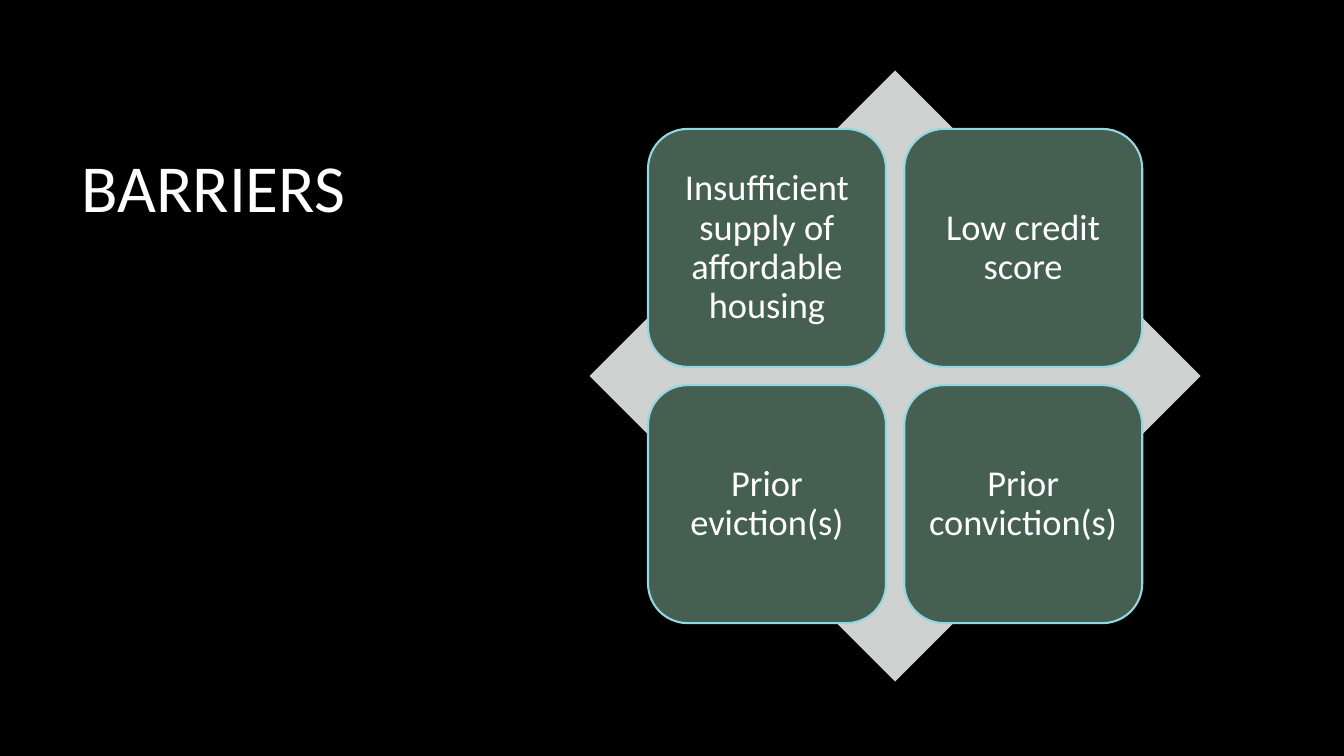
from pptx import Presentation
from pptx.dml.color import RGBColor
from pptx.enum.shapes import MSO_SHAPE as Preset
from pptx.enum.text import MSO_ANCHOR as Anchor, PP_ALIGN as Align
from pptx.util import Pt

COLORS = {
    "background": "000000",
    "text": "FFFFFF",
    "diamond": "CFD2D0",
    "tile": "455F51",
    "outline": "94D7E4",
}
FONT = "Calibri"
BARRIERS = [
    "Insufficient supply of affordable housing",
    "Low credit score",
    "Prior eviction(s)",
    "Prior conviction(s)",
]
CENTER_X, CENTER_Y = 639.4, 268.6
DIAMOND_SIZE = 436.3
TILE_SIZE = 170
TILE_GAP = 13


def color(name):
    return RGBColor.from_string(COLORS[name])


def write_text(text_frame, text, size, align):
    paragraph = text_frame.paragraphs[0]
    paragraph.alignment = align
    paragraph.line_spacing = 0.9
    run = paragraph.add_run()
    run.text = text
    run.font.name = FONT
    run.font.size = Pt(size)
    run.font.color.rgb = color("text")


def add_title(slide, text):
    title = slide.shapes.title
    title.left, title.top, title.width, title.height = Pt(51), Pt(106.5), Pt(231), Pt(350.5)
    title.text_frame.word_wrap = True
    title.text_frame.vertical_anchor = Anchor.TOP
    write_text(title.text_frame, text, 48, Align.LEFT)


def add_square_shape(slide, preset, left, top, size, fill):
    """Add a filled preset shape of equal width and height, with no outline."""
    shape = slide.shapes.add_shape(preset, Pt(left), Pt(top), Pt(size), Pt(size))
    shape.shadow.inherit = False
    shape.fill.solid()
    shape.fill.fore_color.rgb = color(fill)
    shape.line.fill.background()
    return shape


def add_tile(slide, left, top, text):
    tile = add_square_shape(slide, Preset.ROUNDED_RECTANGLE, left, top, TILE_SIZE, "tile")
    tile.line.color.rgb = color("outline")
    tile.line.width = Pt(1.5)
    frame = tile.text_frame
    frame.word_wrap = True
    frame.vertical_anchor = Anchor.MIDDLE
    frame.margin_left = frame.margin_right = frame.margin_top = frame.margin_bottom = Pt(7.8)
    write_text(frame, text, 26, Align.CENTER)


def add_matrix(slide, texts):
    """Add the diamond and a two-by-two grid of tiles around its centre."""
    half = DIAMOND_SIZE / 2
    add_square_shape(slide, Preset.DIAMOND, CENTER_X - half, CENTER_Y - half, DIAMOND_SIZE, "diamond")
    pitch = TILE_SIZE + TILE_GAP
    reach = TILE_SIZE + TILE_GAP / 2
    for index, text in enumerate(texts):
        row, column = divmod(index, 2)
        add_tile(slide, CENTER_X - reach + column * pitch, CENTER_Y - reach + row * pitch, text)


def main():
    presentation = Presentation()
    presentation.slide_width, presentation.slide_height = Pt(960), Pt(540)
    slide = presentation.slides.add_slide(presentation.slide_layouts[5])
    slide.background.fill.solid()
    slide.background.fill.fore_color.rgb = color("background")
    add_title(slide, "BARRIERS")
    add_matrix(slide, BARRIERS)
    presentation.save("out.pptx")


if __name__ == "__main__":
    main()
